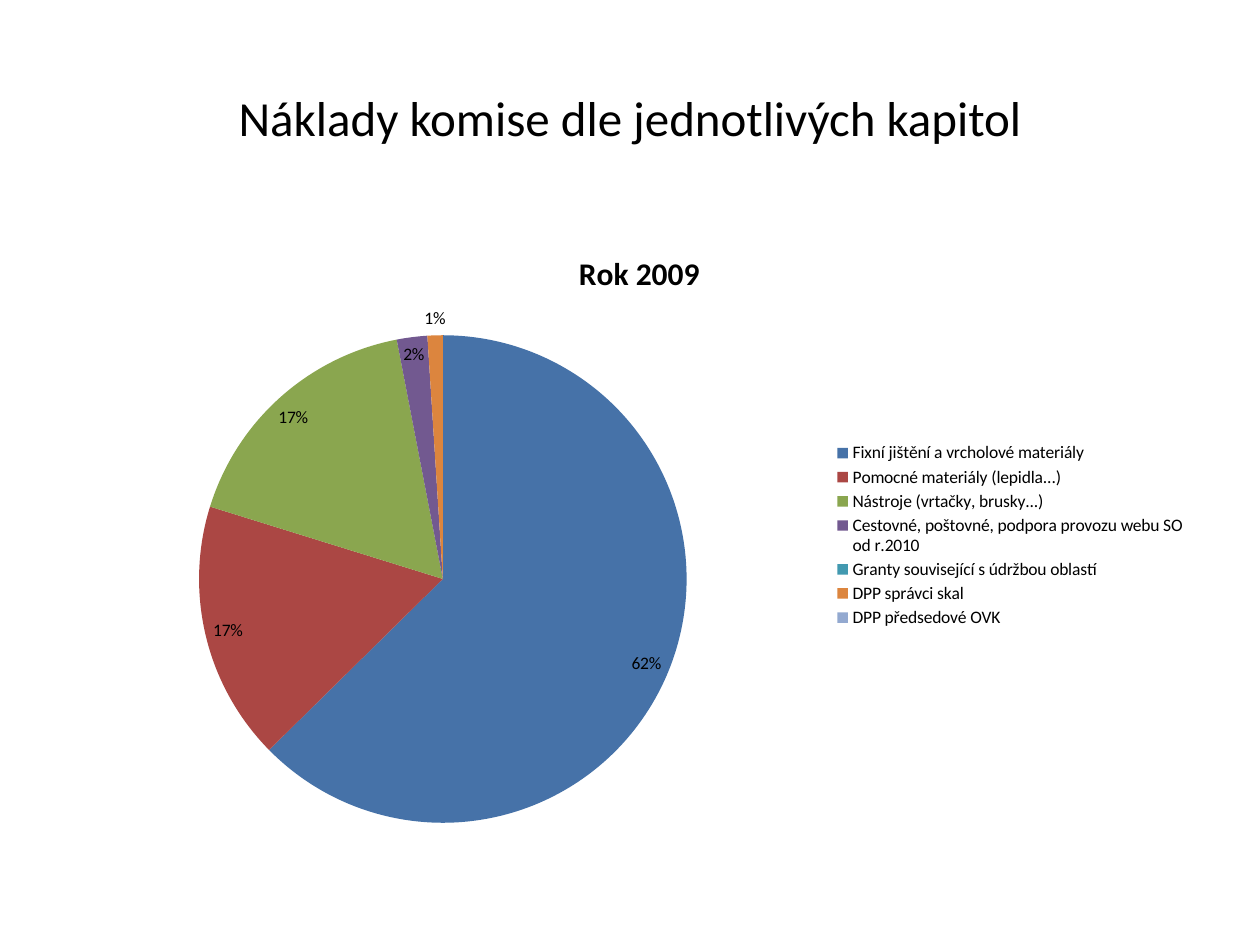
from pptx import Presentation
from pptx.chart.data import CategoryChartData
from pptx.dml.color import RGBColor
from pptx.enum import chart as ch, text as tx
from pptx.oxml import parse_xml
from pptx.oxml.ns import nsdecls
from pptx.util import Inches, Pt

# Content
HEADING = "Náklady komise dle jednotlivých kapitol"
CHART_TITLE = "Rok 2009"
COSTS = [  # chapter, share in percent, slice colour
    ("Fixní jištění a vrcholové materiály", 62, "4672A8"),
    ("Pomocné materiály (lepidla...)", 17, "AB4744"),
    ("Nástroje (vrtačky, brusky...)", 17, "8AA64F"),
    ("Cestovné, poštovné, podpora provozu webu SO od r.2010", 2, "725990"),
    ("Granty související s údržbou oblastí", 0, "4299B0"),
    ("DPP správci skal", 1, "DC853E"),
    ("DPP předsedové OVK", 0, "93A9D0"),
]
THEME = {"font": "Calibri", "ink": "000000", "heading": 28, "chart_title": 18, "small": 10}


def style(font, size, bold=False):
    font.name, font.size, font.bold = THEME["font"], Pt(size), bold
    font.color.rgb = RGBColor.from_string(THEME["ink"])


def write(frame, content, *, size, bold=False, align=tx.PP_ALIGN.CENTER):
    frame.text = content
    paragraph = frame.paragraphs[0]
    paragraph.alignment = align
    style(paragraph.runs[0].font, size, bold)


def layout_xml(target="", **fractions):
    """Manual layout in fractions of the chart area."""
    inner = f'<c:layoutTarget val="{target}"/>' if target else ""
    inner += "".join(f'<c:{key}Mode val="edge"/>' for key in "xy")
    inner += "".join(f'<c:{key} val="{value}"/>' for key, value in fractions.items())
    return parse_xml(f'<c:layout {nsdecls("c")}><c:manualLayout>{inner}</c:manualLayout></c:layout>')


def place(element, after, layout):
    """Replace the layout of a chart part, right after the named child if any."""
    for old in element.xpath("c:layout"):
        element.remove(old)
    before = element.xpath(after) if after else []
    if before:
        before[-1].addnext(layout)
    else:
        element.insert(0, layout)


prs = Presentation()
prs.slide_width, prs.slide_height = Inches(10), Inches(7.5)
slide = prs.slides.add_slide(prs.slide_layouts[5])

# Heading
heading = slide.shapes.title
heading.left, heading.top, heading.width, heading.height = map(Inches, (0.5, 0.3, 9, 1.25))
heading.text_frame.vertical_anchor = tx.MSO_ANCHOR.MIDDLE
write(heading.text_frame, HEADING, size=THEME["heading"])

# Pie of costs
chapters, shares, colours = zip(*COSTS)
data = CategoryChartData()
data.categories = chapters
data.add_series("Series 1", shares)
pie = slide.shapes.add_chart(
    ch.XL_CHART_TYPE.PIE, *map(Inches, (0.5, 1.75, 9, 4.95)), data).chart
style(pie.font, THEME["small"])
pie.has_title = True
write(pie.chart_title.text_frame, CHART_TITLE, size=THEME["chart_title"], bold=True)

plot = pie.plots[0]
plot.vary_by_categories = True
for index, colour in enumerate(colours):
    fill = plot.series[0].points[index].format.fill
    fill.solid()
    fill.fore_color.rgb = RGBColor.from_string(colour)

# Labels: empty chapters stay unlabelled
plot.has_data_labels = True
labels = plot.data_labels
labels.show_value, labels.show_percentage = True, False
labels.number_format, labels.number_format_is_linked = '0"%";;', False
labels.position = ch.XL_LABEL_POSITION.BEST_FIT
style(labels.font, THEME["small"])

# Legend and positions
pie.has_legend = True
legend = pie.legend
legend.position = ch.XL_LEGEND_POSITION.RIGHT
legend.include_in_layout = False
style(legend.font, THEME["small"])
root = pie.element
place(root.xpath("c:chart/c:title")[0], "c:tx", layout_xml(x=0.45, y=0.04))
place(root.xpath("c:chart/c:plotArea")[0], "", layout_xml("inner", x=0.12, y=0.18, w=0.43, h=0.79))
place(root.xpath("c:chart/c:legend")[0], "c:legendPos", layout_xml(x=0.68, y=0.35, w=0.31, h=0.31))

prs.save("out.pptx")
